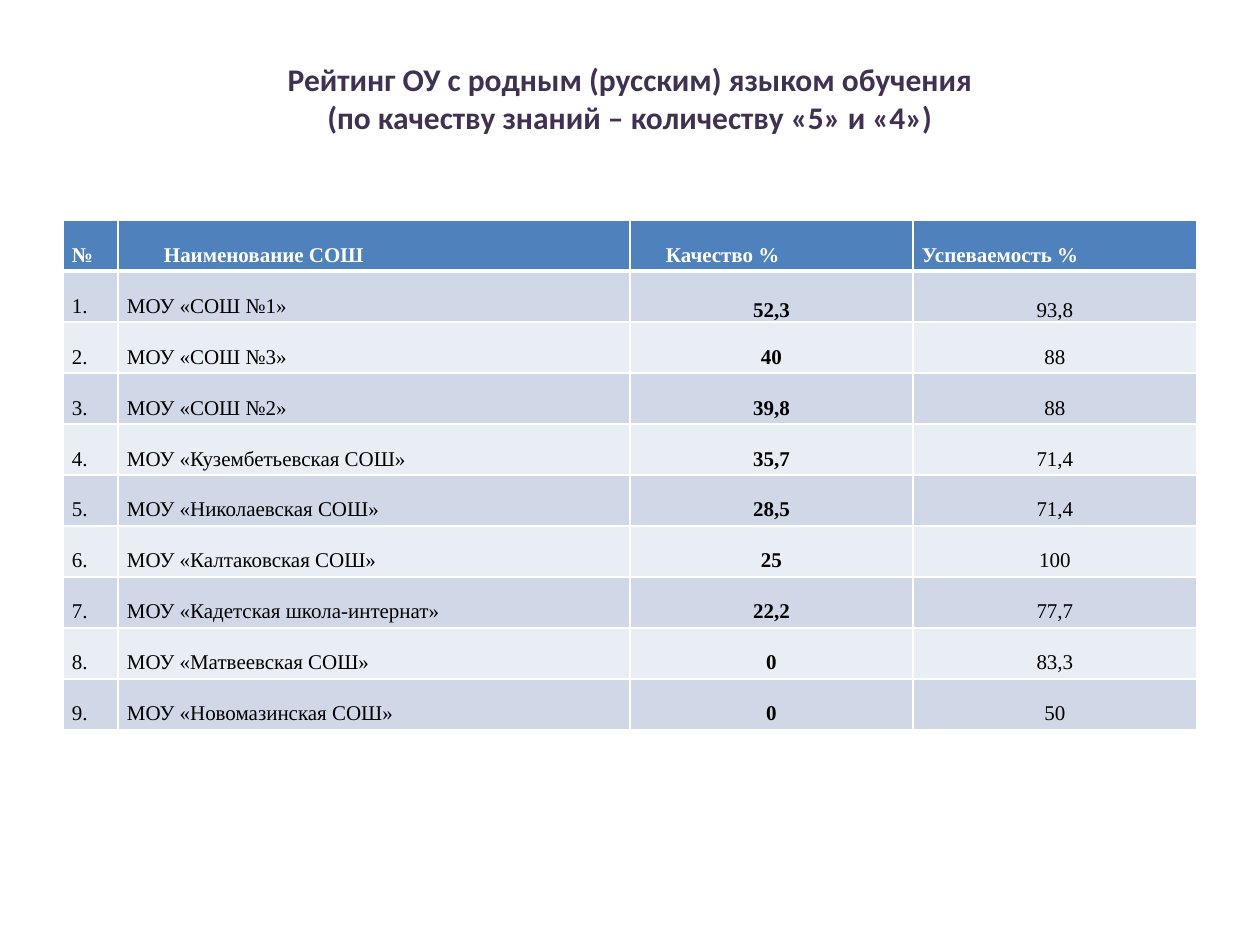
from lxml import etree
from pptx import Presentation
from pptx.dml.color import RGBColor
from pptx.enum.text import MSO_ANCHOR, PP_ALIGN
from pptx.oxml.ns import qn
from pptx.util import Pt

PX = 7257.14
LEFT, CENTER = PP_ALIGN.LEFT, PP_ALIGN.CENTER
TOP, MIDDLE, BOTTOM = MSO_ANCHOR.TOP, MSO_ANCHOR.MIDDLE, MSO_ANCHOR.BOTTOM

COLORS = {
    "title": "403152",
    "header": "4F81BD",
    "odd": "D0D8E8",
    "even": "E9EDF4",
    "white": "FFFFFF",
    "text": "000000",
}
TITLE = "Рейтинг ОУ с родным (русским) языком обучения\v(по качеству знаний – количеству «5» и «4»)"
HEADERS = ["№", "Наименование СОШ", "Качество %", "Успеваемость %"]
HEADER_INDENTS = [0, 37, 27, 0]
COLUMN_WIDTHS = [55, 512, 283, 284]
ROW_HEIGHT = 51
SCHOOLS = [
    ("МОУ «СОШ №1»", "52,3", "93,8"),
    ("МОУ «СОШ №3»", "40", "88"),
    ("МОУ «СОШ №2»", "39,8", "88"),
    ("МОУ «Кузембетьевская СОШ»", "35,7", "71,4"),
    ("МОУ «Николаевская СОШ»", "28,5", "71,4"),
    ("МОУ «Калтаковская СОШ»", "25", "100"),
    ("МОУ «Кадетская школа-интернат»", "22,2", "77,7"),
    ("МОУ «Матвеевская СОШ»", "0", "83,3"),
    ("МОУ «Новомазинская СОШ»", "0", "50"),
]


def px(n):
    return round(n * PX)


def rgb(name):
    return RGBColor.from_string(COLORS[name])


def set_font(p, name, size, color, bold):
    p.font.name = name
    p.font.size = Pt(size)
    p.font.bold = bold
    p.font.color.rgb = rgb(color)


def add_borders(cell, top, bottom):
    tcPr = cell._tc.get_or_add_tcPr()
    for tag, width in (("lnL", 1), ("lnR", 1), ("lnT", top), ("lnB", bottom)):
        ln = etree.SubElement(tcPr, qn(f"a:{tag}"), w=str(Pt(width)))
        fill = etree.SubElement(ln, qn("a:solidFill"))
        etree.SubElement(fill, qn("a:srgbClr"), val=COLORS["white"])


def add_title(slide):
    sp = slide.shapes.add_textbox(px(63), px(38), px(1134), px(157))
    tf = sp.text_frame
    tf.word_wrap = True
    tf.vertical_anchor = MIDDLE
    tf.margin_bottom = px(44)
    p = tf.paragraphs[0]
    p.text = TITLE
    p.alignment = CENTER
    set_font(p, "Calibri", 18, "title", True)


def fill_cell(cell, text, row, col):
    header = row == 0
    tight = row == 1 and col >= 2
    add_borders(cell, 3 if row == 1 else 1, 3 if header else 1)
    cell.fill.solid()
    cell.fill.fore_color.rgb = rgb("header" if header else "odd" if row % 2 else "even")
    cell.margin_left = cell.margin_right = px(9)
    cell.margin_top = cell.margin_bottom = 0
    cell.vertical_anchor = BOTTOM if tight else TOP
    p = cell.text_frame.paragraphs[0]
    p.text = text
    p.alignment = CENTER if not header and col >= 2 else LEFT
    if not tight:
        p.line_spacing = 2.0
        p.space_after = Pt(6)
    if header and HEADER_INDENTS[col]:
        p._p.get_or_add_pPr().set("marL", str(px(HEADER_INDENTS[col])))
    set_font(p, "Times New Roman", 12, "white" if header else "text", header or col == 2)


def add_rating(slide):
    rows = [HEADERS] + [(f"{n}.", *school) for n, school in enumerate(SCHOOLS, 1)]
    table = slide.shapes.add_table(
        len(rows), len(HEADERS), px(63), px(220),
        px(sum(COLUMN_WIDTHS)), px(ROW_HEIGHT * len(rows)),
    ).table
    for column, width in zip(table.columns, COLUMN_WIDTHS):
        column.width = px(width)
    for i, values in enumerate(rows):
        table.rows[i].height = px(ROW_HEIGHT)
        for j, text in enumerate(values):
            fill_cell(table.cell(i, j), text, i, j)


def main():
    prs = Presentation()
    prs.slide_width, prs.slide_height = px(1260), px(945)
    slide = prs.slides.add_slide(prs.slide_layouts[6])
    add_title(slide)
    add_rating(slide)
    prs.save("out.pptx")


if __name__ == "__main__":
    main()
